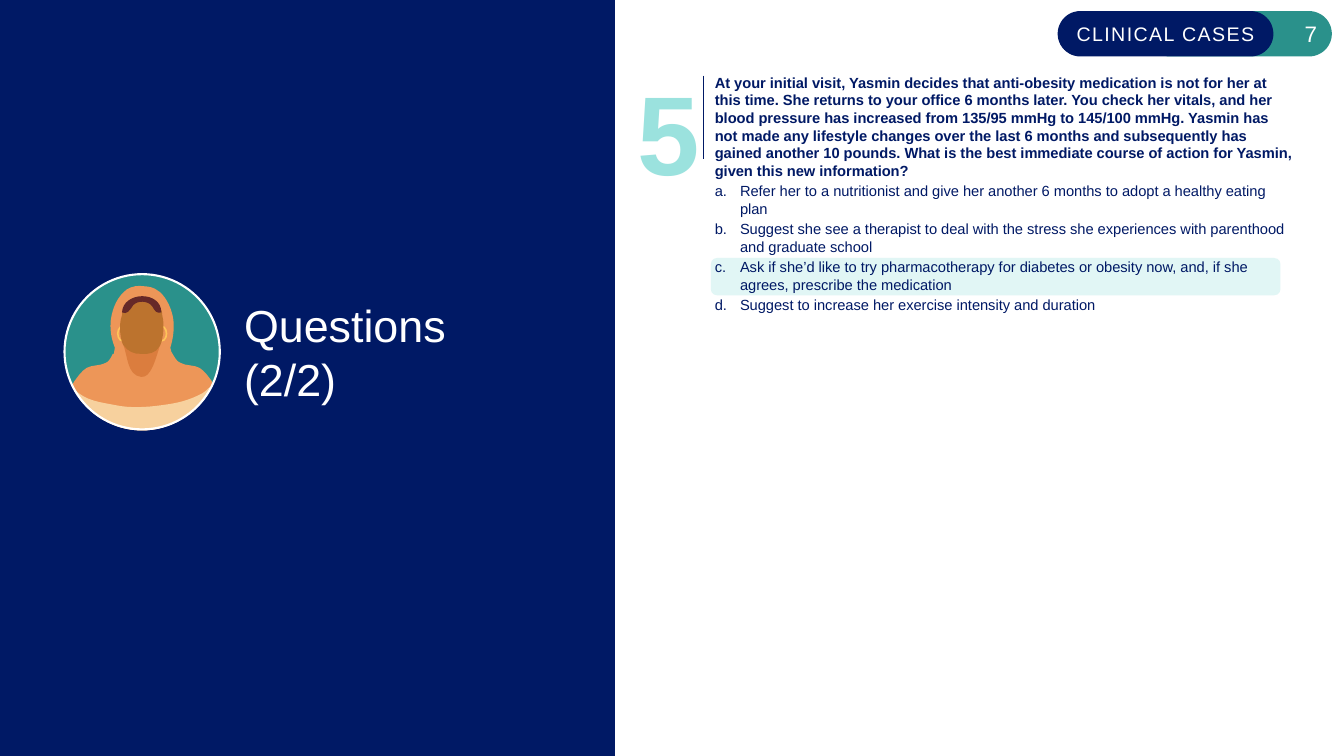
from lxml.etree import SubElement
from pptx import Presentation
from pptx.dml.color import RGBColor
from pptx.enum.shapes import MSO_CONNECTOR, MSO_SHAPE
from pptx.enum.text import MSO_ANCHOR, PP_ALIGN
from pptx.oxml.ns import qn
from pptx.util import Inches, Pt

NAVY, TEAL, WHITE, GOLD = "001965", "2A918B", "FFFFFF", "FFC559"
STEM = (
    "At your initial visit, Yasmin decides that anti-obesity medication is not "
    "for her at this time. She returns to your office 6 months later. You check "
    "her vitals, and her blood pressure has increased from 135/95 mmHg to 145/100 "
    "mmHg. Yasmin has not made any lifestyle changes over the last 6 months and "
    "subsequently has gained another 10 pounds. What is the best immediate course "
    "of action for Yasmin, given this new information?"
)
CHOICES = [
    "Refer her to a nutritionist and give her another 6 months to adopt a healthy eating plan",
    "Suggest she see a therapist to deal with the stress she experiences with "
    "parenthood and graduate school",
    "Ask if she’d like to try pharmacotherapy for diabetes or obesity now, and, "
    "if she agrees, prescribe the medication",
    "Suggest to increase her exercise intensity and duration",
]
SCARF = [
    (1.43, 2.84), (1.48, 2.84, 1.54, 2.86, 1.56, 2.88),
    (1.62, 2.91, 1.7, 3.03, 1.72, 3.17), (1.73, 3.26, 1.72, 3.35, 1.69, 3.45),
    (1.7, 3.49), (1.72, 3.52, 1.75, 3.59, 1.79, 3.6),
    (1.84, 3.63, 1.93, 3.62, 1.98, 3.65), (2.03, 3.68, 2.07, 3.74, 2.1, 3.78),
    (2.11, 3.81), (2.05, 3.93), (1.91, 4.13, 1.67, 4.27, 1.41, 4.27),
    (1.14, 4.27, 0.91, 4.13, 0.77, 3.93), (0.71, 3.83), (0.74, 3.78),
    (0.77, 3.74, 0.81, 3.68, 0.86, 3.65), (0.91, 3.62, 1, 3.63, 1.05, 3.6),
    (1.08, 3.59, 1.1, 3.55, 1.12, 3.51), (1.13, 3.51), (1.14, 3.45),
    (1.1, 3.35, 1.09, 3.26, 1.1, 3.17), (1.12, 3.04, 1.17, 2.94, 1.26, 2.87),
    (1.31, 2.84, 1.37, 2.83, 1.43, 2.84),
]
NECK = [(1.22, 3.41), (1.27, 3.54, 1.26, 3.72, 1.4, 3.74), (1.5, 3.75, 1.54, 3.57, 1.59, 3.42)]
FACE = [
    (1.4, 2.96), (1.38, 2.95, 1.2, 3.02, 1.21, 3.13),
    (1.17, 3.23, 1.2, 3.41, 1.23, 3.43), (1.26, 3.48, 1.34, 3.52, 1.4, 3.51),
    (1.47, 3.52, 1.55, 3.5, 1.58, 3.44), (1.61, 3.41, 1.64, 3.24, 1.61, 3.13),
    (1.62, 3.02, 1.46, 2.96, 1.4, 2.96),
]
HAIR = [
    (1.21, 3.1), (1.26, 3.12, 1.28, 3.09, 1.32, 3.03),
    (1.36, 2.98, 1.47, 2.98, 1.51, 3.04), (1.54, 3.09, 1.55, 3.11, 1.6, 3.1),
    (1.6, 2.88, 1.22, 2.89, 1.21, 3.1),
]
SHIRT = [
    (0.7, 3.79), (0.73, 3.85), (0.84, 3.98, 1, 3.99, 1.15, 4.02),
    (1.29, 4.05, 1.46, 4.04, 1.6, 4.02), (1.75, 4, 1.86, 3.98, 2.01, 3.9),
    (2.03, 3.89, 2.05, 3.87, 2.07, 3.85), (2.1, 3.83), (2.05, 3.93),
    (1.91, 4.13, 1.67, 4.27, 1.41, 4.27), (1.09, 4.27, 0.81, 4.07, 0.7, 3.79),
]


def color(code):
    """Turn a hex string into a colour."""
    return RGBColor.from_string(code)


def paint(shape, fill=None, line=None, width=1):
    """Set fill and outline, and drop the shadow."""
    shape.shadow.inherit = False
    if fill:
        shape.fill.solid()
        shape.fill.fore_color.rgb = color(fill)
    else:
        shape.fill.background()
    if line:
        shape.line.color.rgb = color(line)
        shape.line.width = Pt(width)
    else:
        shape.line.fill.background()


def add_form(slide, kind, box, fill=None, line=None, width=1):
    """Add a painted preset shape."""
    shape = slide.shapes.add_shape(kind, *map(Inches, box))
    paint(shape, fill, line, width)
    return shape


def add_curve(slide, parts, fill):
    """Add a closed outline of lines (2 numbers) and Bezier curves (6 numbers)."""
    spots = [tuple(map(Inches, part[-2:])) for part in parts]
    maker = slide.shapes.build_freeform(*spots[0])
    maker.add_line_segments(spots[1:], close=True)
    shape = maker.convert_to_shape()
    edges = list(shape._element.iter(qn("a:lnTo")))
    for edge, part in zip(edges, parts[1:]):
        if len(part) == 6:
            edge.tag = qn("a:cubicBezTo")
            for spot, (x, y) in enumerate((part[:2], part[2:4])):
                point = SubElement(edge, qn("a:pt"), x=str(Inches(x) - shape.left),
                                   y=str(Inches(y) - shape.top))
                edge.insert(spot, point)
    paint(shape, fill)


def add_run(para, text, size, code, bold=False):
    """Add one styled run."""
    run = para.add_run()
    run.text = text
    run.font.name = "Arial"
    run.font.size = Pt(size)
    run.font.bold = bold
    run.font.color.rgb = color(code)
    return run


def add_box(slide, box, wrap=True):
    """Add a text box without margins and return its frame."""
    frame = slide.shapes.add_textbox(*map(Inches, box)).text_frame
    frame.word_wrap = wrap
    frame.margin_left = frame.margin_right = frame.margin_top = frame.margin_bottom = 0
    return frame


def add_pill(slide, box, fill, text, size, align):
    """Add a fully rounded label."""
    pill = add_form(slide, MSO_SHAPE.ROUNDED_RECTANGLE, box, fill)
    pill.adjustments[0] = 0.5
    frame = pill.text_frame
    frame.vertical_anchor = MSO_ANCHOR.MIDDLE
    frame.margin_left = frame.margin_right = Inches(0.08)
    frame.margin_top = frame.margin_bottom = Inches(0.04)
    para = frame.paragraphs[0]
    para.alignment = align
    return add_run(para, text, size, WHITE)


def add_rule(slide, x, top, end):
    """Add the upright line beside the question."""
    rule = slide.shapes.add_connector(
        MSO_CONNECTOR.STRAIGHT, Inches(x), Inches(top), Inches(x), Inches(end))
    rule.line.color.rgb = color(NAVY)
    rule.line.width = Pt(1)
    SubElement(rule._element.spPr, qn("a:effectLst"))


def add_quiz(slide):
    """Add the question with its lettered choices."""
    mark = add_form(slide, MSO_SHAPE.ROUNDED_RECTANGLE, (7.05, 2.56, 5.65, 0.37), "CDF0EE")
    tint = mark._element.spPr.find(".//" + qn("a:srgbClr"))
    SubElement(tint, qn("a:alpha"), val="58000")
    digit = add_box(slide, (6.32, 0.36, 0.62, 1.47), wrap=False).paragraphs[0]
    digit.line_spacing = 1.2
    add_run(digit, "5", 80, "9BE2DE", True)
    add_rule(slide, 6.98, 0.75, 1.58)
    frame = add_box(slide, (7.09, 0.73, 5.74, 2.41))
    stem = frame.paragraphs[0]
    stem.space_after = Pt(2)
    add_run(stem, STEM, 10.5, NAVY, True)
    for choice in CHOICES:
        para = frame.add_paragraph()
        props = para._p.get_or_add_pPr()
        props.set("marL", str(Inches(0.25)))
        props.set("indent", str(-Inches(0.25)))
        SubElement(props, qn("a:buFont"), typeface="+mj-lt")
        SubElement(props, qn("a:buAutoNum"), type="alphaLcPeriod")
        para.space_after = Pt(2)
        add_run(para, choice, 10.5, NAVY)


def add_title(slide):
    """Add the two-line title."""
    frame = add_box(slide, (2.42, 0.45, 2.95, 6.08))
    frame.vertical_anchor = MSO_ANCHOR.MIDDLE
    para = frame.paragraphs[0]
    add_run(para, "Questions", 32, WHITE)
    para.add_line_break()
    add_run(para, "(2/2)", 32, WHITE)


def add_badge(slide):
    """Add the round drawing of a woman in a scarf."""
    disc = (0.64, 2.72, 1.54, 1.54)
    add_form(slide, MSO_SHAPE.OVAL, disc, TEAL)
    add_curve(slide, SCARF, "ED9658")
    add_curve(slide, NECK, "DB7D3E")
    for left in (1.16, 1.55):
        ring = add_form(slide, MSO_SHAPE.DONUT, (left, 3.23, 0.11, 0.16), GOLD)
        ring.adjustments[0] = 0.15
    for parts, fill in ((FACE, "BC732E"), (HAIR, "662928"), (SHIRT, "F7D19E")):
        add_curve(slide, parts, fill)
    add_form(slide, MSO_SHAPE.OVAL, disc, None, WHITE, 1.5)


def main():
    """Build and save the slide."""
    deck = Presentation()
    deck.slide_width, deck.slide_height = Inches(13.33), Inches(7.5)
    slide = deck.slides.add_slide(deck.slide_layouts[6])
    add_form(slide, MSO_SHAPE.RECTANGLE, (0, 0, 6.1, 7.5), NAVY)
    add_pill(slide, (11.38, 0.11, 1.83, 0.45), TEAL, "7", 16, PP_ALIGN.RIGHT)
    label = add_pill(
        slide, (10.49, 0.11, 2.14, 0.45), NAVY, "CLINICAL CASES", 14, PP_ALIGN.CENTER)
    label._r.get_or_add_rPr().set("spc", "100")
    add_quiz(slide)
    add_title(slide)
    add_badge(slide)
    deck.save("out.pptx")


if __name__ == "__main__":
    main()
